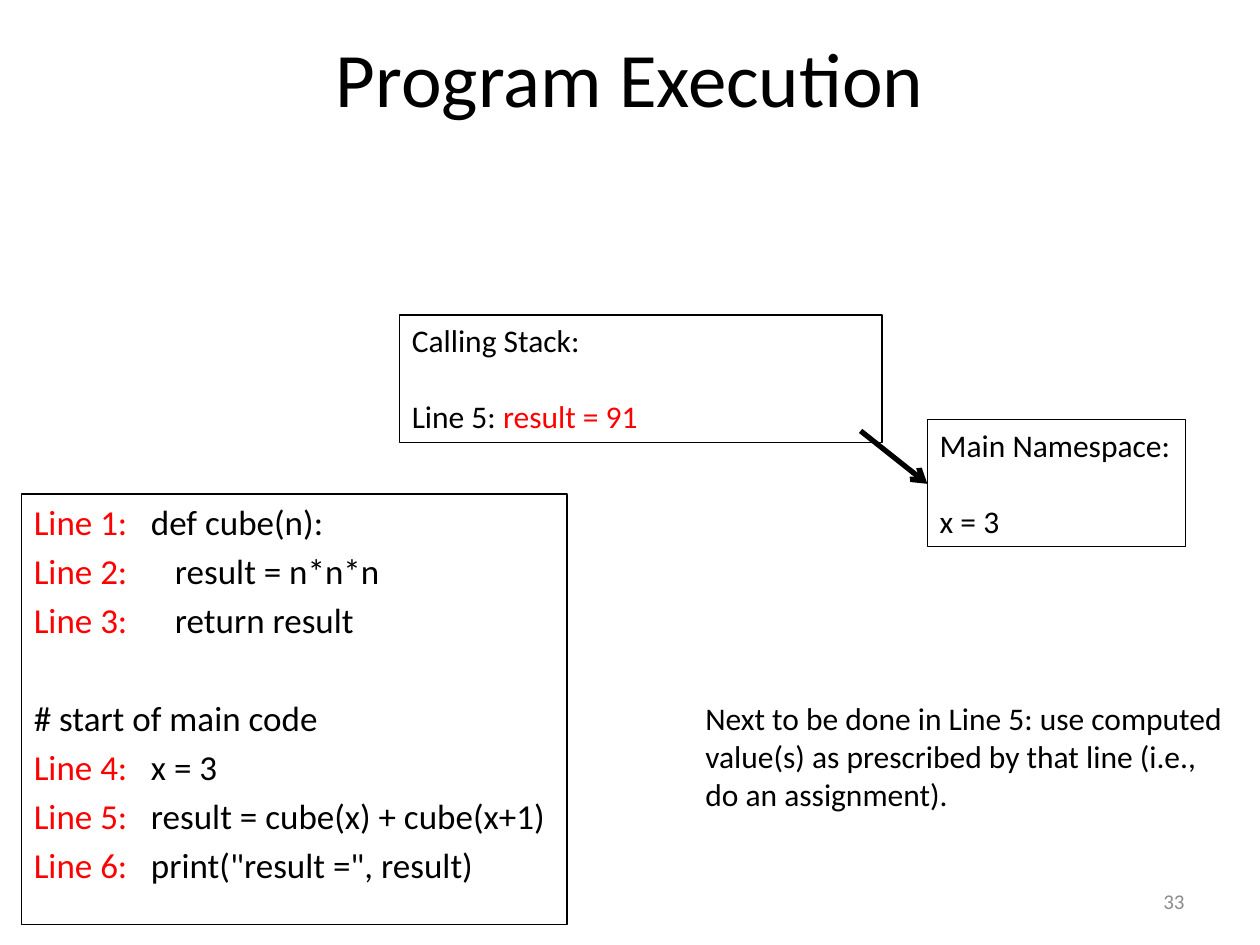
from dataclasses import dataclass, field

from lxml import etree
from pptx import Presentation, util as u
from pptx.dml.color import RGBColor
from pptx.enum import shapes, text
from pptx.oxml import ns

BLACK, RED, GREY = "000000", "FF0000", "8C8C8C"
LINE_BREAK = "\v"
CODE_TAB, CODE_INDENT = 0.93, 0.19  # inches from the text edge, per level


@dataclass
class Line:
    """One paragraph: (words, colour) runs, gap above, optional tab stop."""
    runs: list[tuple[str, str]]
    gap: float = 0
    tab: float | None = None


@dataclass
class Block:
    """One text area at left, top, width, height in inches."""
    place: tuple[float, float, float, float]
    size: float
    lines: list[Line]
    outlined: bool = False
    align: text.PP_ALIGN = text.PP_ALIGN.LEFT
    frame: dict = field(default_factory=dict)


def code(number: int, statement: str, level: int = 0, gap: float = 4) -> Line:
    """A program line with its red label and tabbed statement."""
    runs = [(f"Line {number}:", RED), (f"\t{statement}", BLACK)]
    return Line(runs, gap, CODE_TAB + level * CODE_INDENT)


def rgb(colour: str) -> RGBColor:
    return RGBColor.from_string(colour)


def set_all(target, values: dict) -> None:
    for name, value in values.items():
        setattr(target, name, value)


def add_tab_stop(paragraph, position: float) -> None:
    properties = paragraph._p.get_or_add_pPr()
    stops = etree.SubElement(properties, ns.qn("a:tabLst"))
    etree.SubElement(stops, ns.qn("a:tab"),
                     pos=str(u.Inches(position)), algn="l")


def write_line(paragraph, line: Line, block: Block) -> None:
    set_all(paragraph, {"alignment": block.align,
                        "space_before": u.Pt(line.gap)})
    if line.tab is not None:
        add_tab_stop(paragraph, line.tab)
    for words, colour in line.runs:
        for i, part in enumerate(words.split(LINE_BREAK)):
            if i:
                paragraph.add_line_break()
            run = paragraph.add_run()
            run.text = part
            set_all(run.font, {"name": "Calibri", "size": u.Pt(block.size)})
            run.font.color.rgb = rgb(colour)


def draw_block(slide, block: Block) -> None:
    area = slide.shapes.add_textbox(*map(u.Inches, block.place))
    if block.outlined:
        area.line.color.rgb = rgb(BLACK)
        area.line.width = u.Pt(0.75)
    frame = area.text_frame
    set_all(frame, {"word_wrap": True, **block.frame})
    for i, line in enumerate(block.lines):
        paragraph = frame.add_paragraph() if i else frame.paragraphs[0]
        write_line(paragraph, line, block)


def draw_arrow(slide, start: tuple[float, float],
               end: tuple[float, float]) -> None:
    arrow = slide.shapes.add_connector(
        shapes.MSO_CONNECTOR.STRAIGHT, *map(u.Inches, start + end))
    arrow.line.color.rgb = rgb(BLACK)
    arrow.line.width = u.Pt(3)
    etree.SubElement(arrow.line._get_or_add_ln(), ns.qn("a:tailEnd"),
                     type="arrow")
    etree.SubElement(arrow._element.spPr, ns.qn("a:effectLst"))


MIDDLE = {"vertical_anchor": text.MSO_ANCHOR.MIDDLE}
SKIP_18, SKIP_20 = 22, 32.4  # gaps as tall as one skipped line

TITLE = Block((0.5, 0.17, 9, 0.88), 44, [Line([("Program Execution", BLACK)])],
              align=text.PP_ALIGN.CENTER, frame=MIDDLE)
PROGRAM = Block((0.17, 3.92, 4.33, 3.42), 20, [
    code(1, "def cube(n):", gap=0),
    code(2, "result = n*n*n", level=1),
    code(3, "return result", level=1),
    Line([("# start of main code", BLACK)], gap=SKIP_20),
    code(4, "x = 3"),
    code(5, "result = cube(x) + cube(x+1)"),
    code(6, 'print("result =", result)'),
], outlined=True)
PAGE_NUMBER = Block((7.17, 6.95, 2.33, 0.4), 12, [Line([("33", GREY)])],
                    align=text.PP_ALIGN.RIGHT, frame=MIDDLE)
NAMESPACE = Block((7.36, 3.33, 2.05, 1.01), 18, [
    Line([("Main Namespace:", BLACK)]),
    Line([("x = 3", BLACK)], gap=SKIP_18),
], outlined=True)
CALLING_STACK = Block((3.17, 2.5, 3.83, 1.01), 18, [
    Line([("Calling Stack:", BLACK)]),
    Line([("Line 5: ", BLACK), ("result = 91", RED)], gap=SKIP_18),
], outlined=True)
NEXT_STEP = Block((5.5, 5.5, 4.36, 1.01), 18, [Line([(LINE_BREAK.join([
    "Next to be done in Line 5: use computed",
    "value(s) as prescribed by that line (i.e.,",
    "do an assignment).",
]), BLACK)])])


def main() -> None:
    deck = Presentation()
    set_all(deck, {"slide_width": u.Inches(10), "slide_height": u.Inches(7.5)})
    slide = deck.slides.add_slide(deck.slide_layouts[6])

    # Title, program and state of execution
    for block in (TITLE, PROGRAM, PAGE_NUMBER, NAMESPACE, CALLING_STACK):
        draw_block(slide, block)

    # Link from the stack frame to its namespace, then the next step
    draw_arrow(slide, (6.83, 3.42), (7.36, 3.84))
    draw_block(slide, NEXT_STEP)

    deck.save("out.pptx")


if __name__ == "__main__":
    main()
